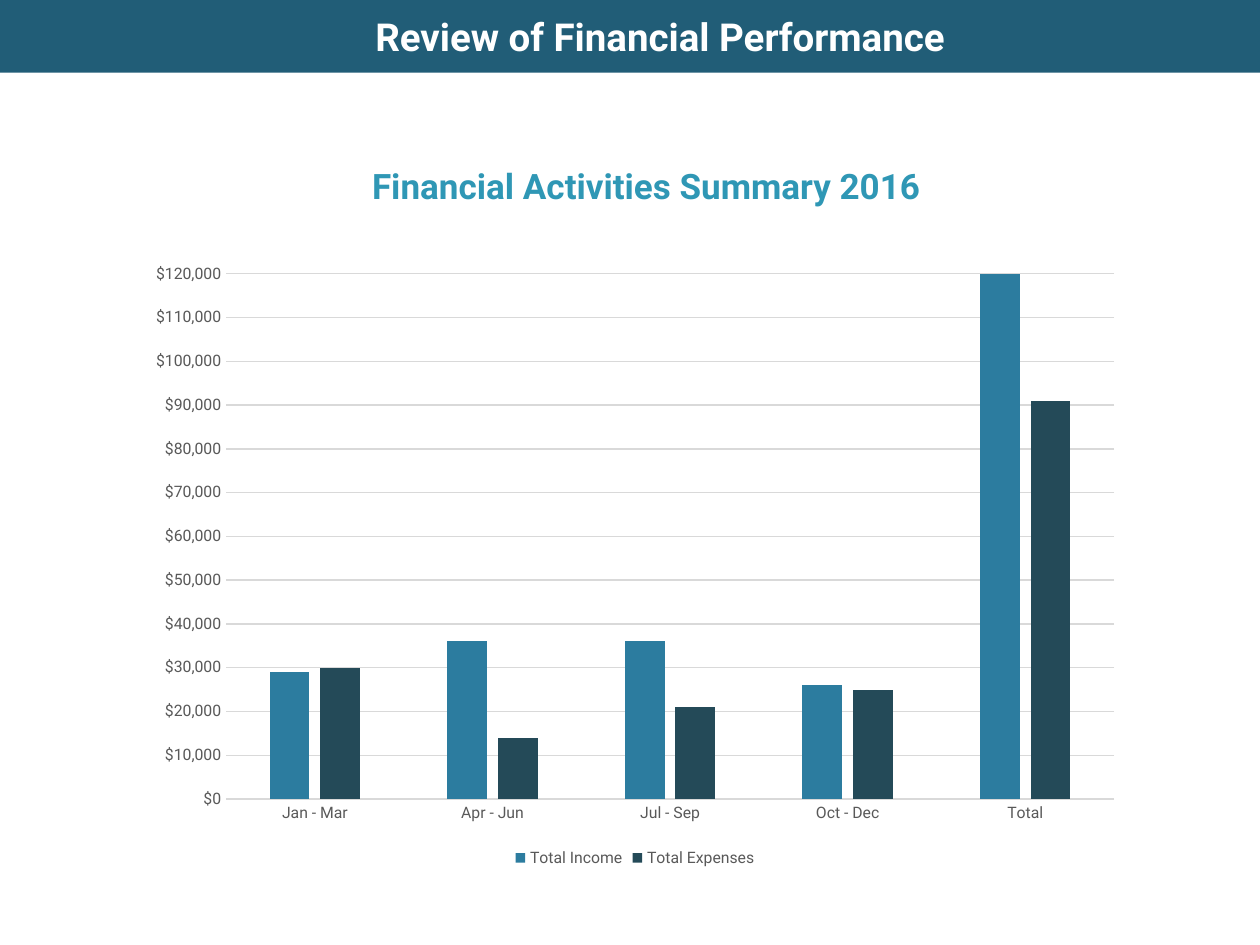
from dataclasses import dataclass

import pptx
import pptx.chart.data
import pptx.dml.color
import pptx.enum.chart
import pptx.enum.shapes
import pptx.enum.text
import pptx.util

RGBColor = pptx.dml.color.RGBColor
WHITE = RGBColor(0xFF, 0xFF, 0xFF)
BAND_BLUE = RGBColor(0x21, 0x5D, 0x77)
HEADING_BLUE = RGBColor(0x2F, 0x97, 0xB5)
INCOME_BLUE = RGBColor(0x2C, 0x7C, 0x9F)
EXPENSE_TEAL = RGBColor(0x24, 0x4A, 0x58)
LABEL_GREY = RGBColor(0x59, 0x59, 0x59)
GRID_GREY = RGBColor(0xD9, 0xD9, 0xD9)

FONT = "Roboto"
SLIDE_WIDTH = pptx.util.Inches(10)
SLIDE_HEIGHT = pptx.util.Inches(7.5)
QUARTERS = ["Jan - Mar", "Apr - Jun", "Jul - Sep", "Oct - Dec", "Total"]


@dataclass(frozen=True)
class Area:
    left: float
    top: float
    width: float
    height: float

    def lengths(self) -> tuple[int, int, int, int]:
        """Turn shares of the slide's size into lengths."""
        return (
            round(self.left * SLIDE_WIDTH),
            round(self.top * SLIDE_HEIGHT),
            round(self.width * SLIDE_WIDTH),
            round(self.height * SLIDE_HEIGHT),
        )


@dataclass(frozen=True)
class Heading:
    text: str
    size: int
    color: RGBColor
    alignment: pptx.enum.text.PP_ALIGN


@dataclass(frozen=True)
class Measure:
    name: str
    values: tuple[int, ...]
    color: RGBColor


MEASURES = [
    Measure("Total Income", (29000, 36000, 36000, 26000, 127000), INCOME_BLUE),
    Measure("Total Expenses", (30000, 14000, 21000, 25000, 91000), EXPENSE_TEAL),
]


def style_font(font, size: int, color: RGBColor, bold: bool = False) -> None:
    font.name = FONT
    font.size = pptx.util.Pt(size)
    font.bold = bold
    font.color.rgb = color


def style_line(line) -> None:
    line.color.rgb = GRID_GREY
    line.width = pptx.util.Pt(0.75)


def write_heading(shape, heading: Heading) -> None:
    frame = shape.text_frame
    frame.word_wrap = True
    frame.text = heading.text
    para = frame.paragraphs[0]
    para.alignment = heading.alignment
    style_font(para.runs[0].font, heading.size, heading.color, bold=True)


def add_title_band(page) -> None:
    band = page.shapes.add_shape(
        pptx.enum.shapes.MSO_SHAPE.RECTANGLE, *Area(0, 0, 1, 0.077).lengths()
    )
    band.shadow.inherit = False
    band.fill.solid()
    band.fill.fore_color.rgb = BAND_BLUE
    band.line.fill.background()
    write_heading(band, Heading("Review of Financial Performance", 22, WHITE,
                                pptx.enum.text.PP_ALIGN.LEFT))
    band.text_frame.margin_left = round(0.298 * SLIDE_WIDTH)
    band.text_frame.vertical_anchor = pptx.enum.text.MSO_ANCHOR.MIDDLE


def add_chart_heading(page) -> None:
    box = page.shapes.add_textbox(*Area(0.242, 0.167, 0.542, 0.058).lengths())
    write_heading(box, Heading("Financial Activities Summary 2016", 20, HEADING_BLUE,
                               pptx.enum.text.PP_ALIGN.CENTER))


def style_axes(chart) -> None:
    for axis in (chart.category_axis, chart.value_axis):
        axis.major_tick_mark = pptx.enum.chart.XL_TICK_MARK.NONE
        axis.minor_tick_mark = pptx.enum.chart.XL_TICK_MARK.NONE
        style_font(axis.tick_labels.font, 9, LABEL_GREY)
    style_line(chart.category_axis.format.line)

    amounts = chart.value_axis
    amounts.minimum_scale = 0
    amounts.maximum_scale = 120000
    amounts.major_unit = 10000
    amounts.format.line.fill.background()
    amounts.has_major_gridlines = True
    style_line(amounts.major_gridlines.format.line)
    amounts.tick_labels.number_format = '"$"#,##0'
    amounts.tick_labels.number_format_is_linked = False


def add_summary_chart(page) -> None:
    chart_data = pptx.chart.data.CategoryChartData()
    chart_data.categories = QUARTERS
    for measure in MEASURES:
        chart_data.add_series(measure.name, measure.values)
    chart = page.shapes.add_chart(
        pptx.enum.chart.XL_CHART_TYPE.COLUMN_CLUSTERED,
        *Area(0.108, 0.267, 0.792, 0.656).lengths(),
        chart_data,
    ).chart
    chart.has_title = False
    style_font(chart.font, 10, LABEL_GREY)
    style_axes(chart)

    columns = chart.plots[0]
    columns.gap_width = 219
    columns.overlap = -27
    columns.vary_by_categories = False
    for series, measure in zip(columns.series, MEASURES):
        series.invert_if_negative = False
        series.format.fill.solid()
        series.format.fill.fore_color.rgb = measure.color

    chart.has_legend = True
    chart.legend.position = pptx.enum.chart.XL_LEGEND_POSITION.BOTTOM
    chart.legend.include_in_layout = False
    style_font(chart.legend.font, 9, LABEL_GREY)


def main() -> None:
    deck = pptx.Presentation()
    deck.slide_width = SLIDE_WIDTH
    deck.slide_height = SLIDE_HEIGHT
    page = deck.slides.add_slide(deck.slide_layouts[6])
    add_chart_heading(page)
    add_title_band(page)
    add_summary_chart(page)
    deck.save("out.pptx")


if __name__ == "__main__":
    main()
